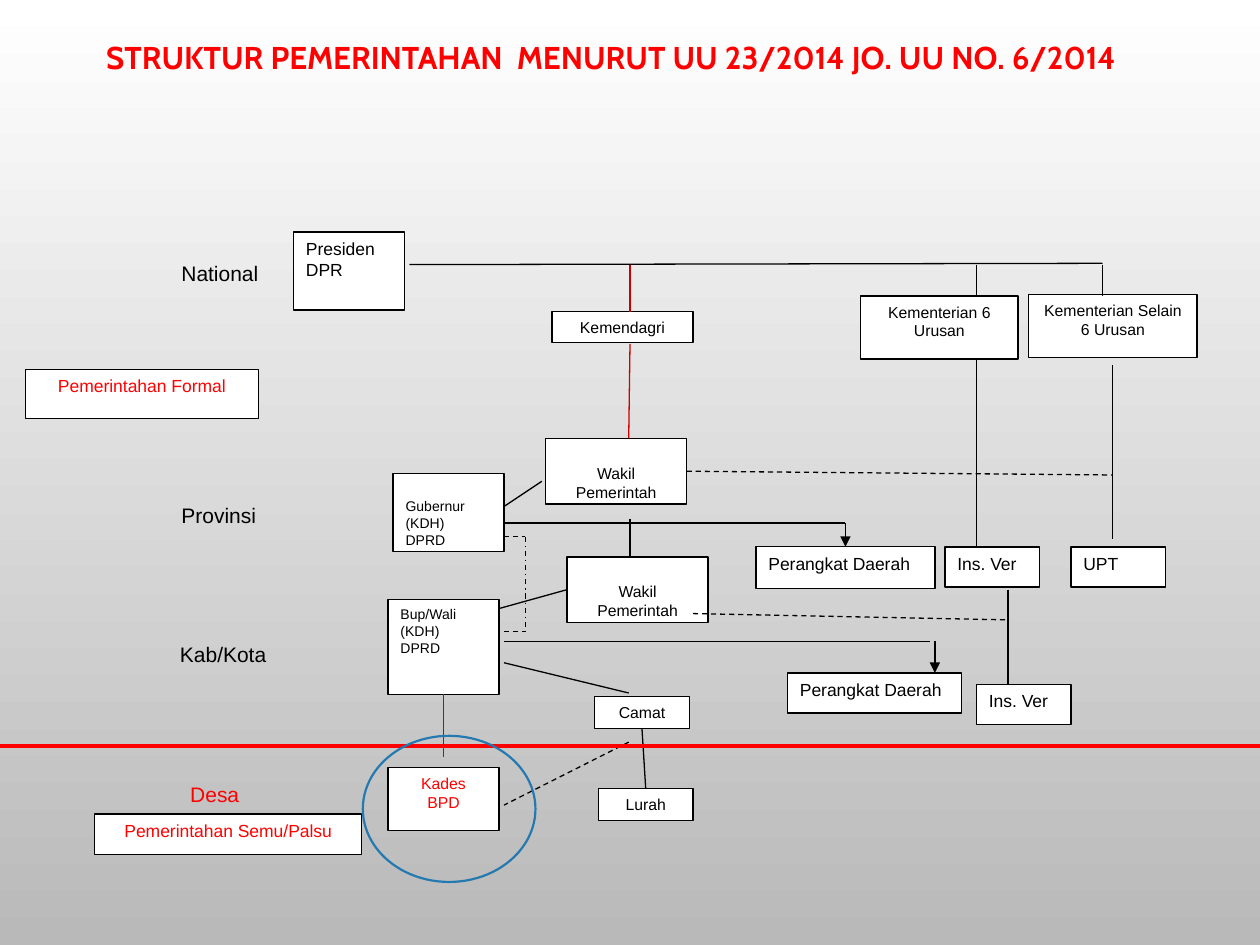
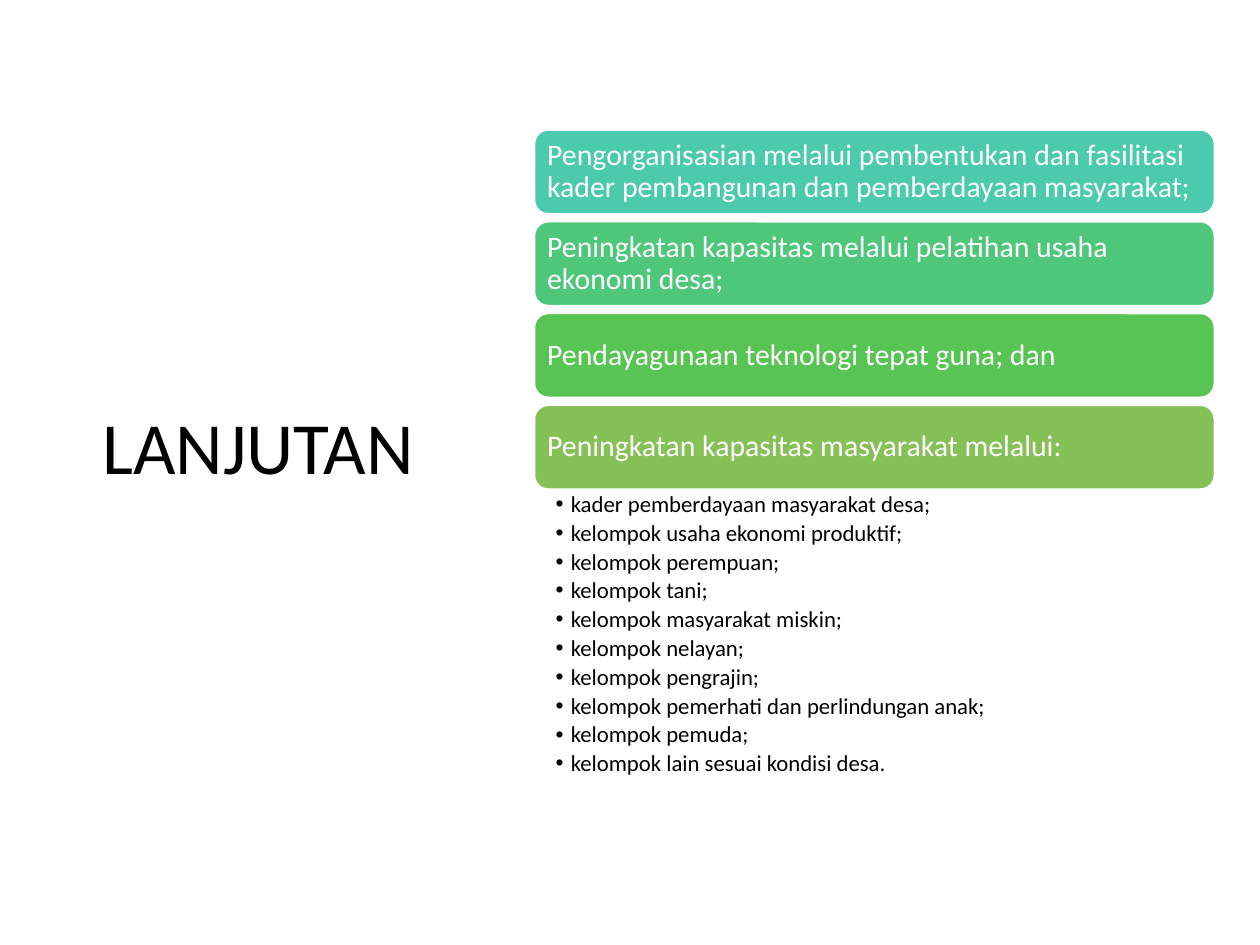
from lxml.etree import SubElement
from pptx import Presentation
from pptx.dml.color import RGBColor
from pptx.enum.dml import MSO_LINE
from pptx.enum.shapes import MSO_CONNECTOR, MSO_SHAPE
from pptx.enum.text import MSO_ANCHOR, MSO_AUTO_SIZE, PP_ALIGN
from pptx.oxml.ns import qn
from pptx.util import Emu, Inches, Pt

BLACK = RGBColor(0x00, 0x00, 0x00)
WHITE = RGBColor(0xFF, 0xFF, 0xFF)
GRAY = RGBColor(0xB9, 0xB9, 0xB9)
RED = RGBColor(0xFF, 0x00, 0x00)
DARK_RED = RGBColor(0xCC, 0x00, 0x00)
BLUE = RGBColor(0x23, 0x79, 0xB0)
TEAL = RGBColor(0x4B, 0xCA, 0xAD)
JADE = RGBColor(0x4F, 0xC7, 0x7B)
GREEN = RGBColor(0x57, 0xC4, 0x53)
OLIVE = RGBColor(0x86, 0xC1, 0x57)

TOP, LEFT, BOTTOM, RIGHT = range(4)
COLUMNS, ROWS = 100, 75
TITLE_AND_CONTENT, TITLE_ONLY = 1, 5


class Deck:
    def __init__(self):
        self.presentation = Presentation()
        self.presentation.slide_width = Inches(10)
        self.presentation.slide_height = Inches(7.5)
        self.slide = None

    def x(self, columns):
        return Emu(round(self.presentation.slide_width * columns / COLUMNS))

    def y(self, rows):
        return Emu(round(self.presentation.slide_height * rows / ROWS))

    def area(self, left, top, width, height):
        return self.x(left), self.y(top), self.x(width), self.y(height)

    def new_slide(self, layout):
        self.slide = self.presentation.slides.add_slide(self.presentation.slide_layouts[layout])

    def gradient(self, start, end):
        fill = self.slide.background.fill
        fill.gradient()
        fill.gradient_angle = 270
        for stop, color in zip(fill.gradient_stops, (start, end)):
            stop.color.rgb = color

    def add_text(self, shape, lines, size, color=BLACK, font="Arial", align=PP_ALIGN.LEFT,
                 anchor=MSO_ANCHOR.TOP, margins=(1, 0.5, 1, 0.5), spacing=1, after=0, bold=False):
        frame = shape.text_frame
        frame.word_wrap = True
        frame.auto_size = MSO_AUTO_SIZE.NONE
        frame.vertical_anchor = anchor
        left, top, right, bottom = margins
        frame.margin_left, frame.margin_right = self.x(left), self.x(right)
        frame.margin_top, frame.margin_bottom = self.y(top), self.y(bottom)
        for index, line in enumerate(lines):
            paragraph = frame.add_paragraph() if index else frame.paragraphs[0]
            paragraph.alignment = align
            paragraph.line_spacing = spacing
            paragraph.space_before = Pt(0)
            paragraph.space_after = Pt(after)
            run = paragraph.add_run()
            run.text = line
            run.font.size = Pt(size)
            run.font.name = font
            run.font.bold = bold
            run.font.color.rgb = color

    def place(self, shape, area):
        shape.left, shape.top, shape.width, shape.height = self.area(*area)

    def title(self, text, area, size, **style):
        shape = self.slide.shapes.title
        self.place(shape, area)
        self.add_text(shape, [text], size, align=PP_ALIGN.CENTER, **style)

    def bullets(self, lines, area, size, **style):
        shape = self.slide.placeholders[1]
        self.place(shape, area)
        self.add_text(shape, lines, size, **style)
        for paragraph in shape.text_frame.paragraphs:
            properties = paragraph._p.get_or_add_pPr()
            properties.set("marL", str(self.x(1.2)))
            properties.set("indent", str(-self.x(1.2)))
            SubElement(properties, qn("a:buFont"), typeface="Arial")
            SubElement(properties, qn("a:buChar"), char="•")

    def shape(self, kind, area, fill, line, width):
        shape = self.slide.shapes.add_shape(kind, *self.area(*area))
        shape.shadow.inherit = False
        if fill is None:
            shape.fill.background()
        else:
            shape.fill.solid()
            shape.fill.fore_color.rgb = fill
        shape.line.color.rgb = line
        shape.line.width = Pt(width)
        return shape

    def box(self, lines, area, size, **style):
        shape = self.shape(MSO_SHAPE.RECTANGLE, area, WHITE, BLACK, 0.75)
        self.add_text(shape, lines, size, **style)
        return shape

    def centered_box(self, lines, area, size=9, **style):
        return self.box(lines, area, size, align=PP_ALIGN.CENTER, **style)

    def band(self, text, area, fill):
        shape = self.shape(MSO_SHAPE.ROUNDED_RECTANGLE, area, fill, WHITE, 1.25)
        self.add_text(shape, [text], 17, WHITE, "Calibri", anchor=MSO_ANCHOR.MIDDLE,
                      margins=(0.7,) * 4, spacing=0.9)

    def label(self, text, area, inset, color=BLACK):
        shape = self.slide.shapes.add_textbox(*self.area(*area))
        self.add_text(shape, [text], 12, color, margins=(*inset, 0, 0))

    def line(self, start, end, color=BLACK, width=0.75, dash=None, arrow=False,
             begin=None, finish=None):
        connector = self.slide.shapes.add_connector(
            MSO_CONNECTOR.STRAIGHT, self.x(start[0]), self.y(start[1]), self.x(end[0]), self.y(end[1]))
        if begin:
            connector.begin_connect(*begin)
        if finish:
            connector.end_connect(*finish)
        connector.line.color.rgb = color
        connector.line.width = Pt(width)
        if dash:
            connector.line.dash_style = dash
        properties = connector.element.spPr
        if arrow:
            SubElement(properties.find(qn("a:ln")), qn("a:tailEnd"), type="triangle")
        SubElement(properties, qn("a:effectLst"))


def build_structure(deck):
    deck.new_slide(TITLE_ONLY)
    deck.gradient(WHITE, GRAY)
    deck.title("STRUKTUR PEMERINTAHAN  MENURUT UU 23/2014 JO. UU NO. 6/2014",
               (2, 2.5, 93, 7.4), 18, color=RED, font="Cabin", bold=True)

    deck.box(["Presiden", "DPR"], (23.3, 18.4, 8.8, 6.2), 10)
    deck.box(["Gubernur", "(KDH)", "DPRD"], (31.2, 37.6, 8.8, 6.2), 8, margins=(1, 1.9, 1, 0))
    regent = deck.box(["Bup/Wali", "(KDH)", "DPRD"], (30.8, 47.6, 8.8, 7.5), 8)
    deck.centered_box(["Kades", "BPD"], (30.8, 60.9, 8.8, 5), color=RED)
    deck.centered_box(["Kemendagri"], (43.8, 24.7, 11.2, 2.5))
    deck.centered_box(["Kementerian 6 Urusan"], (68.3, 23.5, 12.5, 5))
    deck.centered_box(["Kementerian Selain 6 Urusan"], (81.65, 23.4, 13.35, 5))
    province_deputy, regency_deputy = [
        deck.centered_box(["Wakil", "Pemerintah"], (left, top, 11.2, 5.2), margins=(1, 2, 1, 0))
        for left, top in ((43.3, 34.8), (45, 44.2))]
    province_office = deck.box(["Perangkat Daerah"], (60, 43.4, 14.2, 3.3), 10)
    deck.box(["Perangkat Daerah"], (62.5, 53.4, 13.8, 3.2), 10)
    for name, left, top in (("Ins. Ver", 75, 43.4), ("UPT", 85, 43.4), ("Ins. Ver", 77.5, 54.3)):
        deck.box([name], (left, top, 7.5, 3.2), 10)
    camat = deck.centered_box(["Camat"], (47.2, 55.3, 7.5, 2.5))
    lurah = deck.centered_box(["Lurah"], (47.5, 62.6, 7.5, 2.5))
    deck.centered_box(["Pemerintahan Formal"], (2, 29.3, 18.5, 3.9), 10, color=RED)
    deck.centered_box(["Pemerintahan Semu/Palsu"], (7.5, 64.6, 21.2, 3.2), 10, color=RED)

    solid_lines = [
        ((32.5, 21), (87.5, 20.9)),
        ((77.5, 21), (77.5, 23.5)),
        ((87.5, 21), (87.5, 23.5)),
        ((77.5, 28.4), (77.5, 43.4)),
        ((88.3, 29), (88.3, 42.8)),
        ((80, 46.8), (80, 54.3)),
        ((40, 41.5), (67.1, 41.5)),
        ((40, 50.9), (73.8, 50.9)),
        ((40, 52.6), (49.9, 55)),
        ((40, 40.2), (43, 38.2)),
        ((50, 41.2), (50, 44.3)),
    ]
    for start, end in solid_lines:
        deck.line(start, end)
    deck.line((50, 21), (50, 24.8), DARK_RED)
    deck.line((50, 27.3), (49.9, 34.8), DARK_RED)
    deck.line((35.2, 55.1), (35.2, 60.1), DARK_RED, begin=(regent, BOTTOM))
    deck.line((67.1, 41.5), (67.1, 43.4), arrow=True, finish=(province_office, TOP))
    deck.line((74.2, 50.9), (74.2, 53.4), arrow=True)
    deck.line((39.6, 48.3), (45, 46.9), finish=(regency_deputy, LEFT))
    deck.line((50.9, 57.8), (51.2, 62.6), begin=(camat, BOTTOM), finish=(lurah, TOP))
    deck.line((54.5, 37.4), (88.3, 37.7), dash=MSO_LINE.DASH, begin=(province_deputy, RIGHT))
    deck.line((55, 48.7), (80, 49.2), dash=MSO_LINE.DASH)
    deck.line((49.9, 58.9), (40, 63.9), dash=MSO_LINE.DASH)
    for row in (42.6, 50.1):
        deck.line((40, row), (41.7, row), dash=MSO_LINE.DASH)
    deck.line((41.7, 42.6), (41.7, 50.1), dash=MSO_LINE.DASH_DOT)
    deck.line((0, 59.2), (COLUMNS, 59.2), RED, 2.25)

    deck.label("National", (12.5, 15, 9, 9.5), (1.9, 5.7))
    deck.label("Provinsi", (12.5, 39.3, 8.9, 5), (1.9, 0.6))
    deck.label("Kab/Kota", (13.3, 45.1, 8.9, 10.5), (1, 5.8))
    deck.label("Desa", (10.8, 58.4, 9.2, 8), (4.3, 3.6), RED)
    deck.shape(MSO_SHAPE.OVAL, (28.8, 58.4, 13.7, 11.6), None, BLUE, 1.25)


def build_continuation(deck):
    deck.new_slide(TITLE_AND_CONTENT)
    deck.title("LANJUTAN", (4.9, 7, 31.2, 57.5), 42, font="Calibri",
               anchor=MSO_ANCHOR.MIDDLE, spacing=0.9)
    bands = [
        ("Pengorganisasian melalui pembentukan dan fasilitasi kader pembangunan dan "
         "pemberdayaan masyarakat;", TEAL),
        ("Peningkatan kapasitas melalui pelatihan usaha ekonomi desa;", JADE),
        ("Pendayagunaan teknologi tepat guna; dan", GREEN),
        ("Peningkatan kapasitas masyarakat melalui:", OLIVE),
    ]
    for index, (text, fill) in enumerate(bands):
        deck.band(text, (42.4, 10.3 + 7.28 * index, 54, 6.7), fill)
    groups = [
        "kader pemberdayaan masyarakat desa;",
        "kelompok usaha ekonomi produktif;",
        "kelompok perempuan;",
        "kelompok tani;",
        "kelompok masyarakat miskin;",
        "kelompok nelayan;",
        "kelompok pengrajin;",
        "kelompok pemerhati dan perlindungan anak;",
        "kelompok pemuda;",
        "kelompok lain sesuai kondisi desa.",
    ]
    deck.bullets(groups, (42.4, 38.9, 54, 21.9), 13, font="Calibri",
                 margins=(1.7, 0.2, 1.3, 0.2), spacing=0.9, after=2.4)


def main():
    deck = Deck()
    build_structure(deck)
    build_continuation(deck)
    deck.presentation.save("out.pptx")


if __name__ == "__main__":
    main()
